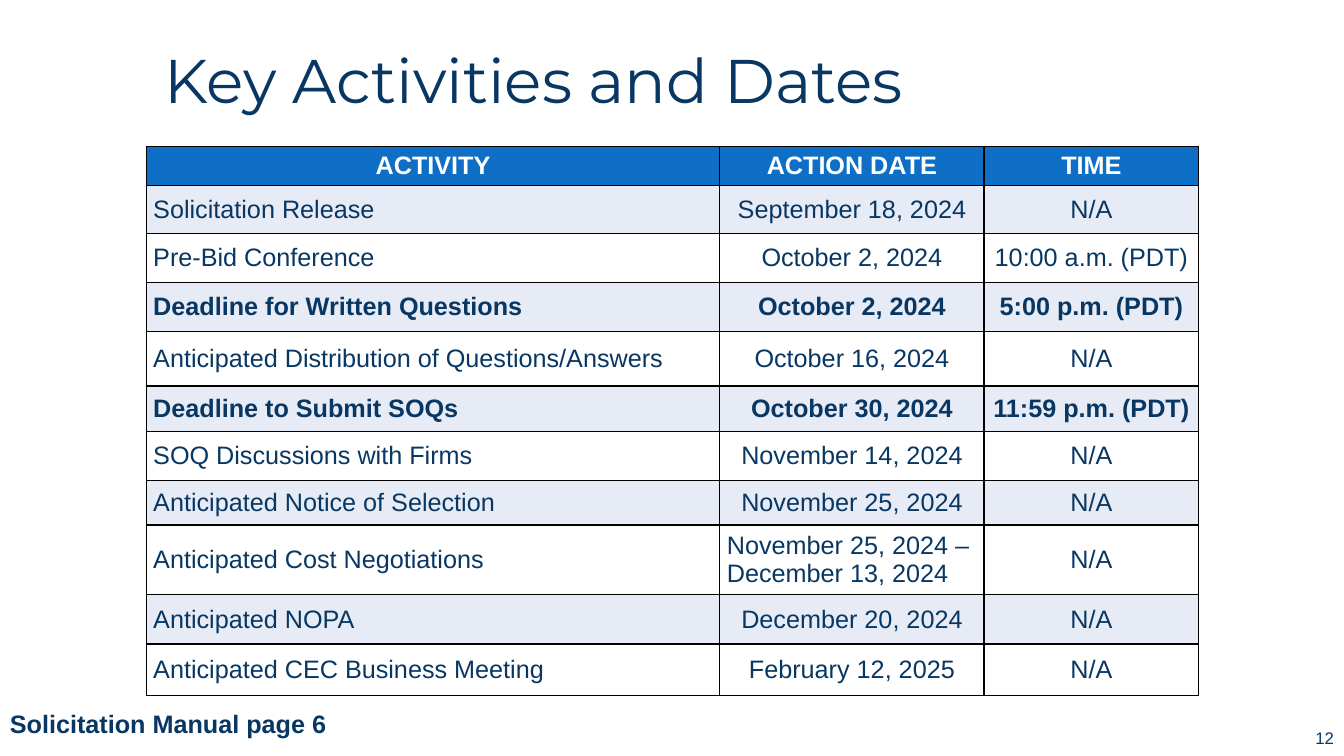
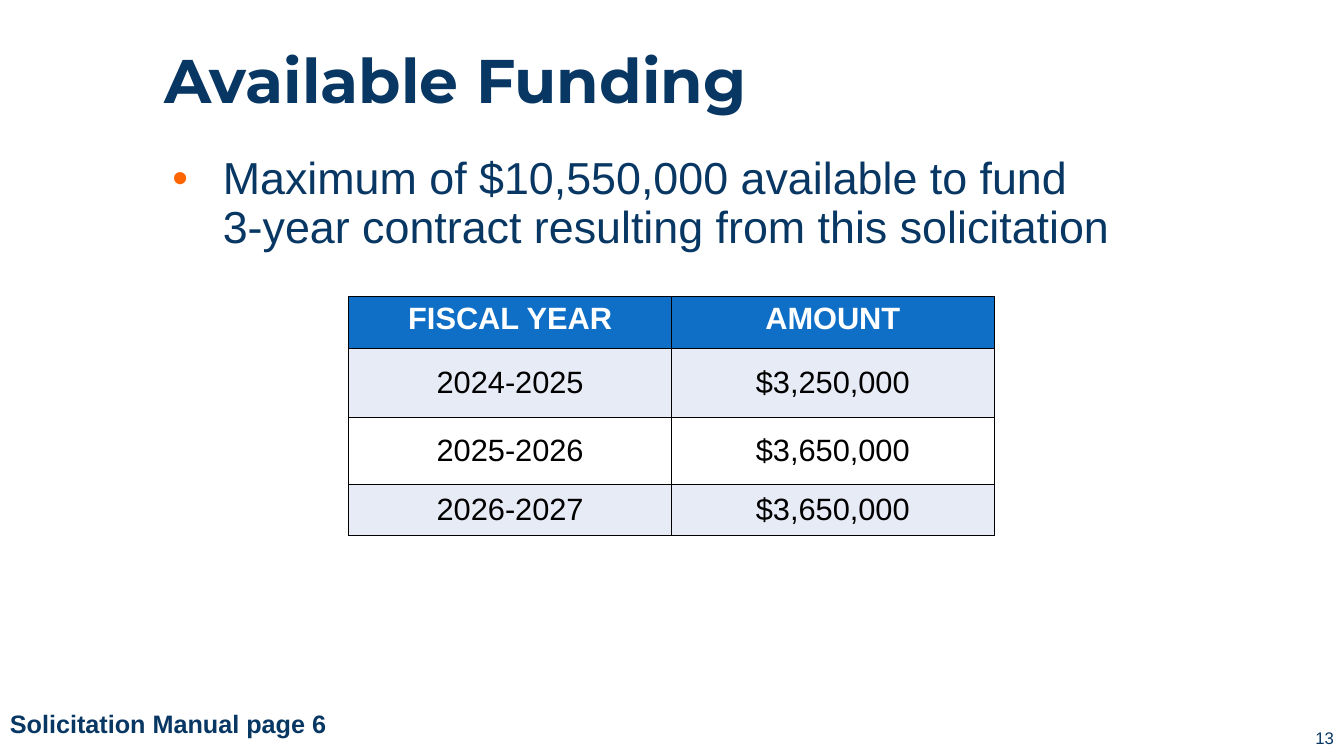
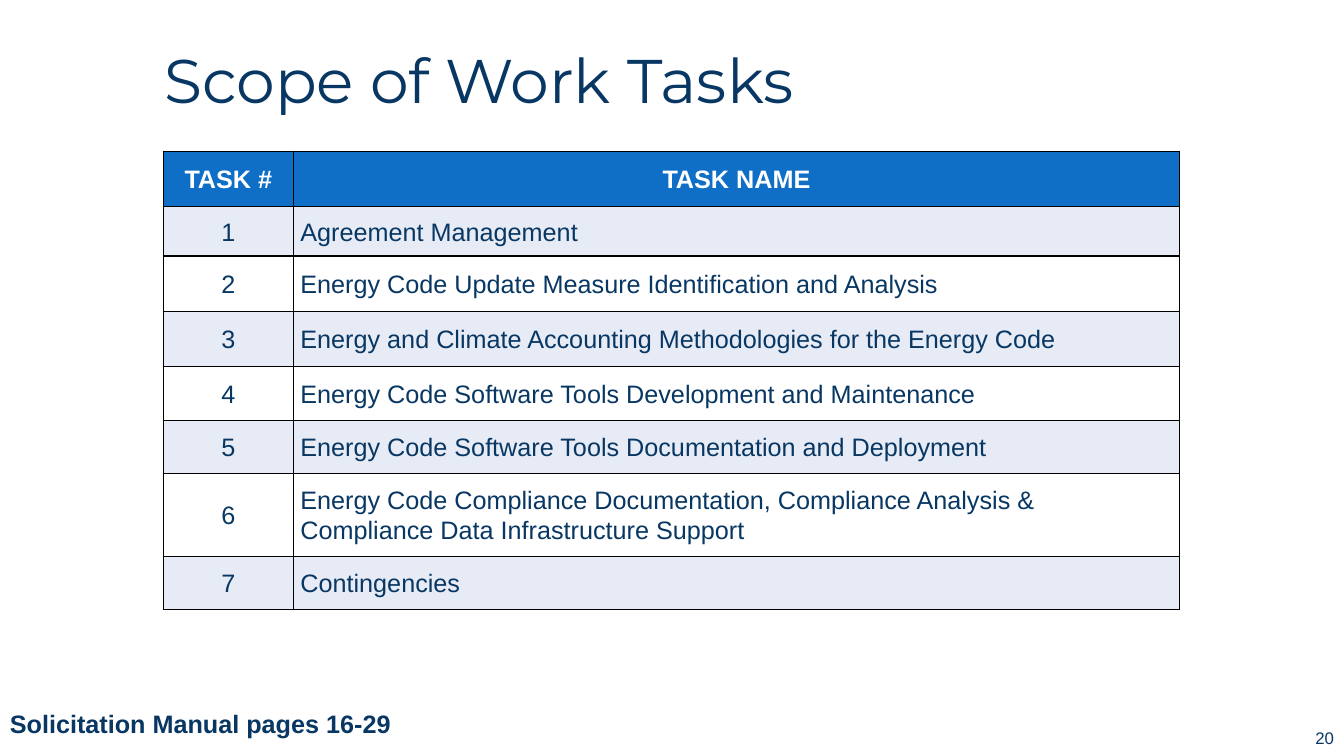
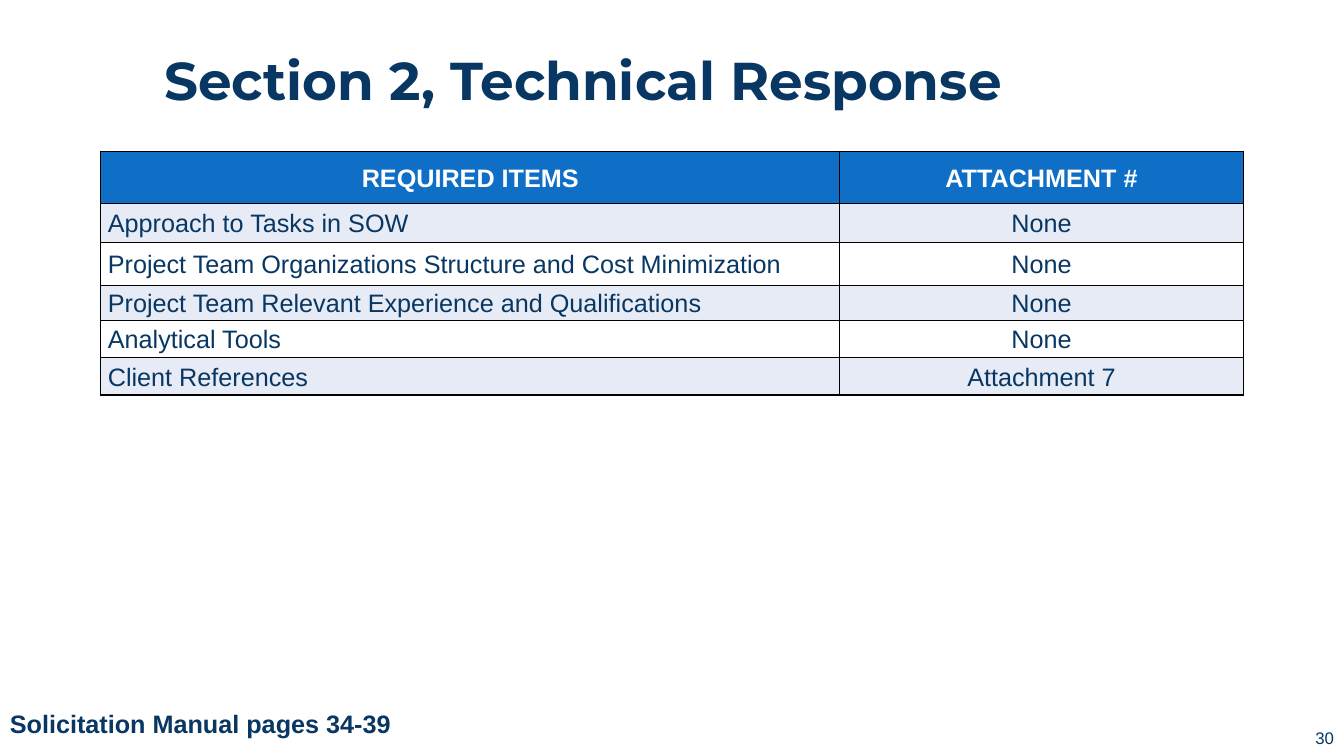
from dataclasses import dataclass

from lxml import etree
from pptx import Presentation
from pptx import util as u
from pptx.dml.color import RGBColor
from pptx.enum import text
from pptx.oxml import ns

# Shared look
NAVY = RGBColor(0x08, 0x37, 0x63)
BLUE = RGBColor(0x0F, 0x6F, 0xC6)
PALE = RGBColor(0xE7, 0xEB, 0xF5)
WHITE = RGBColor(0xFF, 0xFF, 0xFF)
BLACK = RGBColor(0, 0, 0)
ORANGE = RGBColor(0xFF, 0x66, 0x00)
TITLE_FONT, TEXT_FONT = "Montserrat", "Arial"
LEFT, CENTER, RIGHT = text.PP_ALIGN.LEFT, text.PP_ALIGN.CENTER, text.PP_ALIGN.RIGHT
TOP, MIDDLE = text.MSO_ANCHOR.TOP, text.MSO_ANCHOR.MIDDLE

# The slide is a grid of fine square cells
GRID_COLUMNS, GRID_ROWS = 1333, 750
CELL = u.Inches(0.01)
TITLE_BOX = (153, 26, 1089, 114)
BODY_BOX = (151, 150, 1031, 125)
NUMBER_BOX = (1136, 712, 197, 40)
SOURCE_TOP, SOURCE_HEIGHT = 698, 40
BODY_INDENT, BODY_HANGING = 60, 50


@dataclass
class TableStyle:
    size: int = 18
    color: RGBColor = NAVY
    spacing: float = 1.07
    header_anchor: text.MSO_ANCHOR = MIDDLE
    header_inset: tuple = (7, 0)  # sides, top and bottom
    bold_start: str = ""


def lengths(box):
    return [CELL * part for part in box]


def add_span(para, words, size, color=NAVY, bold=False, name=TEXT_FONT):
    span = para.add_run()
    span.text = words
    font = span.font
    font.size, font.bold, font.name = u.Pt(size), bold, name
    font.color.rgb = color


def place(shape, box):
    shape.left, shape.top, shape.width, shape.height = lengths(box)
    frame = shape.text_frame
    frame.auto_size = text.MSO_AUTO_SIZE.NONE
    frame.word_wrap = True
    return frame


def fill_title(page, words, size, bold, box=TITLE_BOX):
    frame = place(page.shapes.title, box)
    frame.vertical_anchor = MIDDLE
    para = frame.paragraphs[0]
    para.alignment, para.line_spacing = LEFT, 0.9
    add_span(para, words, size, bold=bold, name=TITLE_FONT)


def add_bullet(para, color, mark="•"):
    properties = para._p.get_or_add_pPr()
    properties.set("marL", str(CELL * BODY_INDENT))
    properties.set("indent", str(-CELL * BODY_HANGING))
    tint = etree.SubElement(properties, ns.qn("a:buClr"))
    etree.SubElement(tint, ns.qn("a:srgbClr"), val=str(color))
    etree.SubElement(properties, ns.qn("a:buFont"), typeface=TEXT_FONT)
    etree.SubElement(properties, ns.qn("a:buChar"), char=mark)


def fill_body(page, lines, box=BODY_BOX):
    frame = place(page.placeholders[1], box)
    frame.vertical_anchor = TOP
    para = frame.paragraphs[0]
    add_bullet(para, ORANGE)
    para.line_spacing, para.space_before, para.space_after = 0.9, u.Pt(0), u.Pt(12)
    for index, line in enumerate(lines):
        if index:
            para.add_line_break()
        add_span(para, line, 32)


def add_label(page, words, box, size, bold=False, align=LEFT, anchor=TOP):
    frame = place(page.shapes.add_textbox(*lengths(box)), box)
    frame.vertical_anchor = anchor
    para = frame.paragraphs[0]
    para.alignment = align
    add_span(para, words, size, bold=bold)


def add_footer(page, source, source_width, number):
    add_label(page, source, (0, SOURCE_TOP, source_width, SOURCE_HEIGHT), 18, bold=True)
    add_label(page, number, NUMBER_BOX, 12, align=RIGHT, anchor=MIDDLE)


def outline(cell):
    properties = cell._tc.get_or_add_tcPr()
    for side in ("lnL", "lnR", "lnT", "lnB"):
        line = etree.SubElement(properties, ns.qn("a:" + side), w=str(u.Pt(1)))
        paint = etree.SubElement(line, ns.qn("a:solidFill"))
        etree.SubElement(paint, ns.qn("a:srgbClr"), val=str(BLACK))


def fill_cell(cell, words, fill, align, anchor, inset, color, bold, style):
    outline(cell)
    cell.fill.solid()
    cell.fill.fore_color.rgb = fill
    cell.vertical_anchor = anchor
    cell.margin_left = cell.margin_right = CELL * inset[0]
    cell.margin_top = cell.margin_bottom = CELL * inset[1]
    for index, line in enumerate(words.split("\n")):
        frame = cell.text_frame
        para = frame.add_paragraph() if index else frame.paragraphs[0]
        para.alignment, para.line_spacing = align, style.spacing
        add_span(para, line, style.size, color, bold)


def add_grid(page, corner, widths, heights, aligns, rows, style):
    box = (*corner, sum(widths), sum(heights))
    table = page.shapes.add_table(len(rows), len(widths), *lengths(box)).table
    table.horz_banding = False
    for column, width in zip(table.columns, widths):
        column.width = CELL * width
    for index, (row, height) in enumerate(zip(rows, heights)):
        table.rows[index].height = CELL * height
        bold = bool(style.bold_start) and row[0].startswith(style.bold_start)
        for cell, words, align in zip(table.rows[index].cells, row, aligns):
            if index == 0:
                fill_cell(cell, words, BLUE, CENTER, style.header_anchor,
                          style.header_inset, WHITE, True, style)
            else:
                # Cells of two lines are set flush left
                side = LEFT if "\n" in words else align
                fill_cell(cell, words, PALE if index % 2 else WHITE, side,
                          MIDDLE, (7, 0), style.color, bold, style)


def add_table_page(deck, title, grid, footer, body=None, title_size=44, bold=False):
    page = deck.slides.add_slide(deck.slide_layouts[1 if body else 5])
    fill_title(page, title, title_size, bold)
    if body:
        fill_body(page, body)
    add_grid(page, *grid)
    add_footer(page, *footer)


ACTIVITIES = [
    ("ACTIVITY", "ACTION DATE", "TIME"),
    ("Solicitation Release", "September 18, 2024", "N/A"),
    ("Pre-Bid Conference", "October 2, 2024", "10:00 a.m. (PDT)"),
    ("Deadline for Written Questions", "October 2, 2024", "5:00 p.m. (PDT)"),
    ("Anticipated Distribution of Questions/Answers", "October 16, 2024", "N/A"),
    ("Deadline to Submit SOQs", "October 30, 2024", "11:59 p.m. (PDT)"),
    ("SOQ Discussions with Firms", "November 14, 2024", "N/A"),
    ("Anticipated Notice of Selection", "November 25, 2024", "N/A"),
    ("Anticipated Cost Negotiations", "November 25, 2024 –\nDecember 13, 2024", "N/A"),
    ("Anticipated NOPA", "December 20, 2024", "N/A"),
    ("Anticipated CEC Business Meeting", "February 12, 2025", "N/A"),
]
FUNDING = [
    ("FISCAL YEAR", "AMOUNT"),
    ("2024-2025", "$3,250,000"),
    ("2025-2026", "$3,650,000"),
    ("2026-2027", "$3,650,000"),
]
TASK_NAMES = [
    "Agreement Management",
    "Energy Code Update Measure Identification and Analysis",
    "Energy and Climate Accounting Methodologies for the Energy Code",
    "Energy Code Software Tools Development and Maintenance",
    "Energy Code Software Tools Documentation and Deployment",
    "Energy Code Compliance Documentation, Compliance Analysis & "
    "Compliance Data Infrastructure Support",
    "Contingencies",
]
TASKS = [("TASK #", "TASK NAME")]
TASKS += [(str(number), name) for number, name in enumerate(TASK_NAMES, 1)]
REQUIRED_ITEMS = [
    ("REQUIRED ITEMS", "ATTACHMENT #"),
    ("Approach to Tasks in SOW", "None"),
    ("Project Team Organizations Structure and Cost Minimization", "None"),
    ("Project Team Relevant Experience and Qualifications", "None"),
    ("Analytical Tools", "None"),
    ("Client References", "Attachment 7"),
]


def main():
    deck = Presentation()
    deck.slide_width, deck.slide_height = CELL * GRID_COLUMNS, CELL * GRID_ROWS

    # Schedule
    add_table_page(
        deck, "Key Activities and Dates",
        ((145, 145), (569, 262, 213),
         (39, 48, 48, 49, 54, 45, 49, 44, 69, 49, 51),
         (LEFT, CENTER, CENTER), ACTIVITIES,
         TableStyle(spacing=1.0, bold_start="Deadline")),
        ("Solicitation Manual page 6", 350, "12"))

    # Funding
    add_table_page(
        deck, "Available Funding",
        ((346, 294), (320, 320), (52, 68, 67, 50), (CENTER, CENTER), FUNDING,
         TableStyle(size=22, color=BLACK, spacing=1.0,
                    header_anchor=TOP, header_inset=(10, 5))),
        ("Solicitation Manual page 6", 486, "13"),
        body=("Maximum of $10,550,000 available to fund",
              "3-year contract resulting from this solicitation"),
        bold=True)

    # Tasks
    add_table_page(
        deck, "Scope of Work Tasks",
        ((162, 150), (129, 879), (55, 49, 55, 55, 53, 53, 82, 53),
         (CENTER, LEFT), TASKS, TableStyle()),
        ("Solicitation Manual pages 16-29", 430, "20"))

    # Technical response
    add_table_page(
        deck, "Section 2, Technical Response",
        ((100, 150), (733, 400), (52, 39, 42, 35, 37, 37),
         (LEFT, CENTER), REQUIRED_ITEMS, TableStyle()),
        ("Solicitation Manual pages 34-39", 409, "30"),
        title_size=38, bold=True)

    deck.save("out.pptx")


if __name__ == "__main__":
    main()
